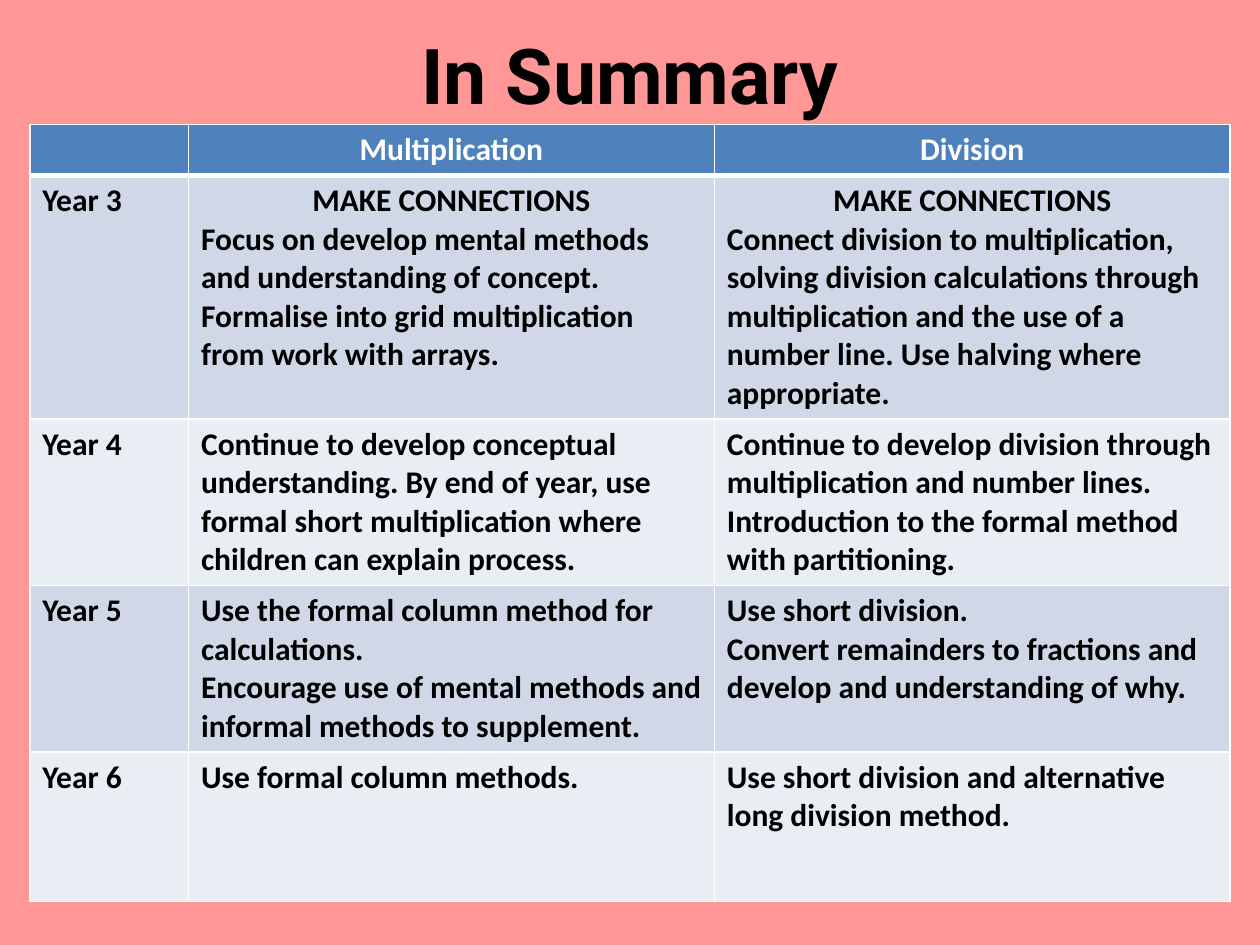
from lxml.etree import SubElement
from pptx import Presentation
from pptx.dml.color import RGBColor
from pptx.enum.text import MSO_ANCHOR, PP_ALIGN
from pptx.oxml.ns import qn
from pptx.util import Cm, Pt

COLUMN_WIDTHS = [3.2, 10.6, 10.4]
ROW_HEIGHTS = [0.94, 4.5, 3.12, 3.07, 3.02]
HEADER_FILL = "4F81BD"
BAND_FILLS = ["D0D8E8", "E9EDF4"]
CONNECTIONS = "MAKE CONNECTIONS"

# One list of paragraphs per cell
SUMMARY = [
    [[], ["Multiplication"], ["Division"]],
    [["Year 3"],
     [CONNECTIONS,
      "Focus on develop mental methods and understanding of concept.",
      "Formalise into grid multiplication from work with arrays."],
     [CONNECTIONS,
      "Connect division to multiplication, solving division calculations through "
      "multiplication and the use of a number line. Use halving where appropriate."]],
    [["Year 4"],
     ["Continue to develop conceptual understanding. By end of year, use formal "
      "short multiplication where children can explain process."],
     ["Continue to develop division through multiplication and number lines.",
      "Introduction to the formal method with partitioning."]],
    [["Year 5"],
     ["Use the formal column method for calculations.",
      "Encourage use of mental methods and informal methods to supplement."],
     ["Use short division.",
      "Convert remainders to fractions and develop and understanding of why."]],
    [["Year 6"],
     ["Use formal column methods."],
     ["Use short division and alternative long division method."]],
]


def colour(value):
    return RGBColor.from_string(value)


def write_paragraph(para, text, font_name, size, text_colour, align):
    para.alignment = align
    span = para.add_run()
    span.text = text
    formats = {"name": font_name, "size": Pt(size), "bold": True}
    for name, value in formats.items():
        setattr(span.font, name, value)
    span.font.color.rgb = colour(text_colour)


def add_title(page, text):
    box = page.shapes.title
    formats = {"left": Cm(1.27), "top": Cm(-0.1), "width": Cm(22.86), "height": Cm(3.18)}
    for name, value in formats.items():
        setattr(box, name, value)
    box.text_frame.vertical_anchor = MSO_ANCHOR.MIDDLE
    write_paragraph(box.text_frame.paragraphs[0], text, "Roboto", 44, "000000",
                    PP_ALIGN.CENTER)


def set_borders(cell, widths):
    properties = cell._tc.get_or_add_tcPr()
    for side, width in widths.items():
        line = SubElement(properties, qn(f"a:ln{side}"), w=str(Pt(width)))
        fill = SubElement(line, qn("a:solidFill"))
        SubElement(fill, qn("a:srgbClr"), val="FFFFFF")


def fill_cell(cell, paragraphs, row):
    is_header = row == 0
    # The rule between the header and the first year is thicker
    set_borders(cell, {"L": 1, "R": 1, "T": 3 if row == 1 else 1, "B": 3 if is_header else 1})
    cell.fill.solid()
    cell.fill.fore_color.rgb = colour(HEADER_FILL if is_header else BAND_FILLS[(row - 1) % 2])
    frame = cell.text_frame
    for index, text in enumerate(paragraphs):
        para = frame.add_paragraph() if index else frame.paragraphs[0]
        centred = is_header or text == CONNECTIONS
        write_paragraph(para, text, "Calibri", 18, "FFFFFF" if is_header else "000000",
                        PP_ALIGN.CENTER if centred else PP_ALIGN.LEFT)


def add_summary_table(page):
    table = page.shapes.add_table(
        len(ROW_HEIGHTS), len(COLUMN_WIDTHS), Cm(0.6), Cm(2.51),
        Cm(sum(COLUMN_WIDTHS)), Cm(sum(ROW_HEIGHTS))).table
    for column, width in zip(table.columns, COLUMN_WIDTHS):
        column.width = Cm(width)
    for row, height in zip(table.rows, ROW_HEIGHTS):
        row.height = Cm(height)
    for row, contents in enumerate(SUMMARY):
        for column, paragraphs in enumerate(contents):
            fill_cell(table.cell(row, column), paragraphs, row)


def main():
    deck = Presentation()
    deck.slide_width, deck.slide_height = Cm(25.4), Cm(19.05)
    page = deck.slides.add_slide(deck.slide_layouts[5])

    # Background
    page.background.fill.solid()
    page.background.fill.fore_color.rgb = colour("FF9797")

    # Title and table
    add_title(page, "In Summary")
    add_summary_table(page)
    deck.save("out.pptx")


if __name__ == "__main__":
    main()
